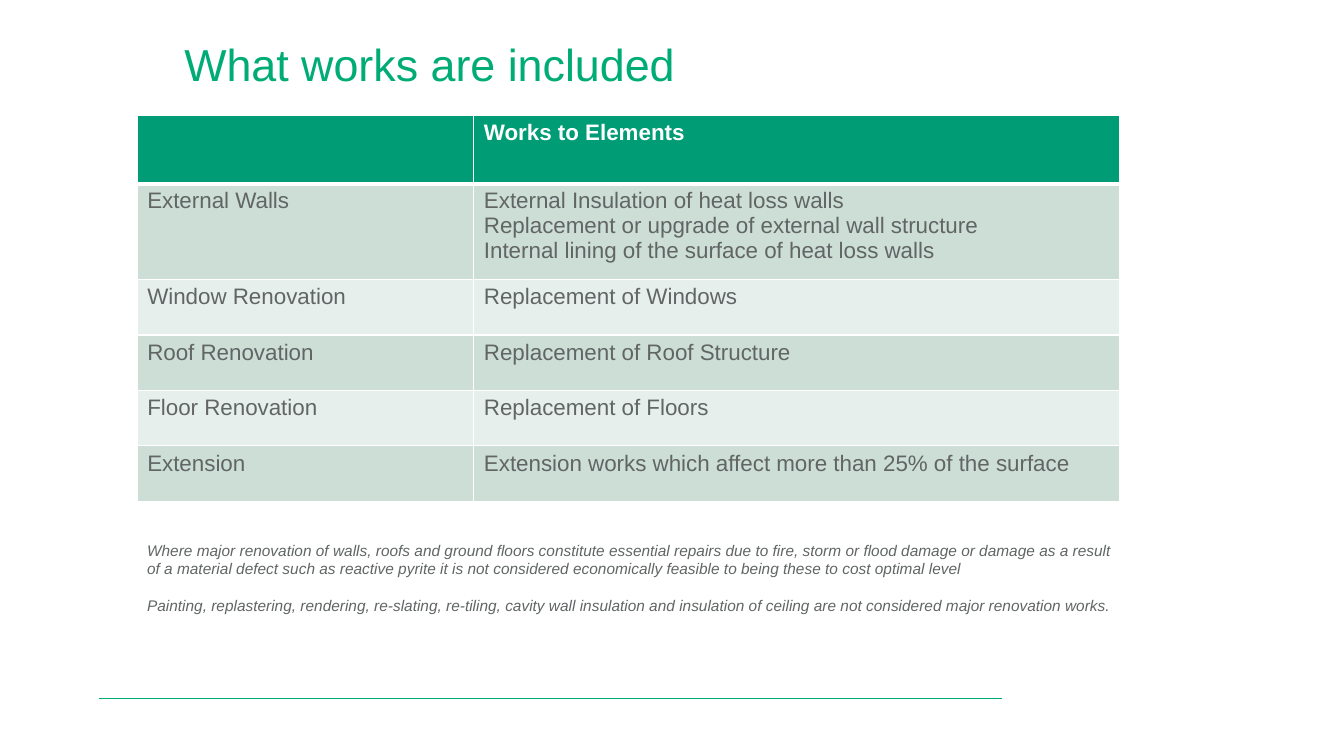
import pptx
import pptx.dml.color
import pptx.enum.shapes
import pptx.oxml
import pptx.oxml.ns
import pptx.util
from lxml import etree

Pt = pptx.util.Pt
RGBColor = pptx.dml.color.RGBColor

GREEN = RGBColor(0x00, 0xAC, 0x75)
HEADER_GREEN = RGBColor(0x00, 0x9C, 0x75)
BAND_DARK = RGBColor(0xCC, 0xDE, 0xD6)
BAND_LIGHT = RGBColor(0xE7, 0xEF, 0xEC)
GREY = RGBColor(0x61, 0x65, 0x65)
WHITE = RGBColor(0xFF, 0xFF, 0xFF)

TITLE = "What works are included"
WORKS = [
    ("", ["Works to Elements"]),
    ("External Walls", [
        "External Insulation of heat loss walls",
        "Replacement or upgrade of external wall structure",
        "Internal lining of the surface of heat loss walls",
    ]),
    ("Window Renovation", ["Replacement of Windows"]),
    ("Roof Renovation", ["Replacement of Roof Structure"]),
    ("Floor Renovation", ["Replacement of Floors"]),
    ("Extension", ["Extension works which affect more than 25% of the surface"]),
]
COLUMN_WIDTHS = [240.5, 461.5]
ROW_HEIGHTS = [49, 68.4] + [39.6] * 4
NOTES = [
    "Where major renovation of walls, roofs and ground floors constitute essential "
    "repairs due to fire, storm or flood damage or damage as a result of a material "
    "defect such as reactive pyrite it is not considered economically feasible to "
    "being these to cost optimal level",
    "Painting, replastering, rendering, re-slating, re-tiling, cavity wall insulation "
    "and insulation of ceiling are not considered major renovation works.",
]


class SlideBuilder:
    font_name = "Arial"

    def __init__(self, slide):
        self.slide = slide

    def add_lines(self, frame, lines, size, color, bold=False, italic=False, gap=0):
        """Fill a text frame with one paragraph per line, gap points apart."""
        for index, line in enumerate(lines):
            paragraph = frame.add_paragraph() if index else frame.paragraphs[0]
            if index and gap:
                paragraph.space_before = Pt(gap)
            run = paragraph.add_run()
            run.text = line
            run.font.name = self.font_name
            run.font.size = Pt(size)
            run.font.color.rgb = color
            run.font.bold = bold
            run.font.italic = italic

    def text(self, left, top, width, height, lines, size, color, **style):
        box = self.slide.shapes.add_textbox(Pt(left), Pt(top), Pt(width), Pt(height))
        box.text_frame.word_wrap = True
        self.add_lines(box.text_frame, lines, size, color, **style)

    def rule(self, left, top, right, color, width):
        line = self.slide.shapes.add_connector(
            pptx.enum.shapes.MSO_CONNECTOR.STRAIGHT, Pt(left), Pt(top), Pt(right), Pt(top))
        line.line.color.rgb = color
        line.line.width = Pt(width)
        etree.SubElement(line._element.spPr, pptx.oxml.ns.qn("a:effectLst"))

    def borders(self, cell, color, **widths):
        """Put cell borders ahead of the fill; widths are keyed L, R, T, B in that order."""
        properties = cell._tc.get_or_add_tcPr()
        for index, (side, width) in enumerate(widths.items()):
            properties.insert(index, pptx.oxml.parse_xml(
                f'<a:ln{side} {pptx.oxml.ns.nsdecls("a")} w="{Pt(width)}"><a:solidFill>'
                f'<a:srgbClr val="{color}"/></a:solidFill></a:ln{side}>'))

    def table(self, left, top, column_widths, row_heights, rows, size):
        table = self.slide.shapes.add_table(
            len(rows), len(column_widths), Pt(left), Pt(top),
            Pt(sum(column_widths)), Pt(sum(row_heights))).table
        table.horz_banding = False
        for column, width in zip(table.columns, column_widths):
            column.width = Pt(width)
        for index, (label, works) in enumerate(rows):
            table.rows[index].height = Pt(row_heights[index])
            header = index == 0
            band = BAND_DARK if index % 2 else BAND_LIGHT
            for cell, lines in zip(table.rows[index].cells, ([label] if label else [], works)):
                cell.fill.solid()
                cell.fill.fore_color.rgb = HEADER_GREEN if header else band
                self.borders(cell, WHITE, L=1, R=1, T=3 if index == 1 else 1,
                             B=3 if header else 1)
                self.add_lines(cell.text_frame, lines, size, WHITE if header else GREY,
                               bold=header)


def main():
    presentation = pptx.Presentation()
    presentation.slide_width = Pt(960)
    presentation.slide_height = Pt(540)
    builder = SlideBuilder(presentation.slides.add_slide(presentation.slide_layouts[6]))
    builder.rule(70.6, 499, 715.7, GREEN, 0.5)
    builder.text(124.6, 23, 753, 65, [TITLE], 32, GREEN)
    builder.table(98, 82.3, COLUMN_WIDTHS, ROW_HEIGHTS, WORKS, 16)
    builder.text(98, 383, 710.6, 60.5, NOTES, 11, GREY, italic=True, gap=13)
    presentation.save("out.pptx")


if __name__ == "__main__":
    main()
